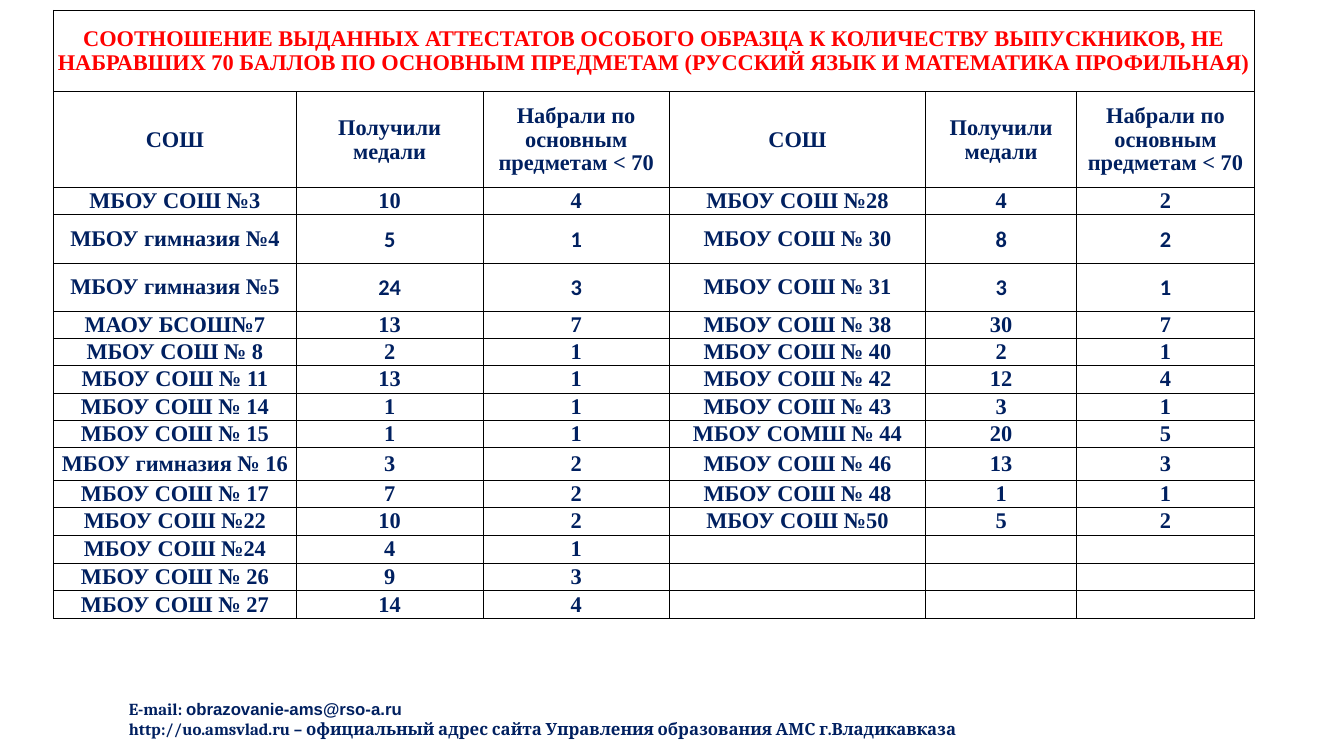
import lxml.etree
import pptx
import pptx.dml.color
import pptx.enum.text
import pptx.oxml.ns
import pptx.util

Inches, Pt = pptx.util.Inches, pptx.util.Pt

COLOURS = {"title": "FF0000", "text": "002060", "border": "000000", "cell": "FFFFFF"}
SERIF = "Times New Roman"

TITLE = (
    "СООТНОШЕНИЕ ВЫДАННЫХ АТТЕСТАТОВ ОСОБОГО ОБРАЗЦА К КОЛИЧЕСТВУ ВЫПУСКНИКОВ, "
    "НЕ НАБРАВШИХ 70 БАЛЛОВ ПО ОСНОВНЫМ ПРЕДМЕТАМ "
    "(РУССКИЙ ЯЗЫК И МАТЕМАТИКА ПРОФИЛЬНАЯ)"
)
HEADERS = (
    "СОШ", "Получили\nмедали", "Набрали по основным предметам < 70",
    "СОШ", "Получили медали", "Набрали по основным предметам < 70",
)
SCHOOLS = [
    ("МБОУ СОШ №3", 10, 4, "МБОУ СОШ №28", 4, 2),
    ("МБОУ гимназия №4", 5, 1, "МБОУ СОШ № 30", 8, 2),
    ("МБОУ гимназия №5", 24, 3, "МБОУ СОШ № 31", 3, 1),
    ("МАОУ БСОШ№7", 13, 7, "МБОУ СОШ № 38", 30, 7),
    ("МБОУ СОШ № 8", 2, 1, "МБОУ СОШ № 40", 2, 1),
    ("МБОУ СОШ № 11", 13, 1, "МБОУ СОШ № 42", 12, 4),
    ("МБОУ СОШ № 14", 1, 1, "МБОУ СОШ № 43", 3, 1),
    ("МБОУ СОШ № 15", 1, 1, "МБОУ СОМШ № 44", 20, 5),
    ("МБОУ гимназия № 16", 3, 2, "МБОУ СОШ № 46", 13, 3),
    ("МБОУ СОШ № 17", 7, 2, "МБОУ СОШ № 48", 1, 1),
    ("МБОУ СОШ №22", 10, 2, "МБОУ СОШ №50", 5, 2),
    ("МБОУ СОШ №24", 4, 1, "", "", ""),
    ("МБОУ СОШ № 26", 9, 3, "", "", ""),
    ("МБОУ СОШ № 27", 14, 4, "", "", ""),
]
CONTACTS = [
    [("E-mail: ", "Cambria"), ("obrazovanie-ams@rso-a.ru", "Arial")],
    [("http://uo.amsvlad.ru – официальный адрес сайта Управления образования "
      "АМС г.Владикавказа", "Cambria")],
]

COLUMN_WIDTHS = (2.41, 1.85, 1.85, 2.54, 1.5, 1.76)
ROW_HEIGHT = 0.27
SPECIAL_HEIGHTS = {0: 0.81, 1: 0.95, 3: 0.48, 4: 0.48, 10: 0.33}
CALIBRI_ROWS = (3, 4)  # gymnasium rows whose figures are in Calibri


def style_font(font, size, colour, name=None):
    font.size, font.bold = Pt(size), True
    font.color.rgb = pptx.dml.color.RGBColor.from_string(COLOURS[colour])
    if name:
        font.name = name


def add_borders(cell):
    properties = cell._tc.get_or_add_tcPr()
    for side in ("a:lnL", "a:lnR", "a:lnT", "a:lnB"):
        line = lxml.etree.SubElement(properties, pptx.oxml.ns.qn(side), w=str(Pt(0.5)))
        fill = lxml.etree.SubElement(line, pptx.oxml.ns.qn("a:solidFill"))
        lxml.etree.SubElement(fill, pptx.oxml.ns.qn("a:srgbClr"), val=COLOURS["border"])


def fill_cell(cell, text, colour, font_name):
    add_borders(cell)
    cell.fill.solid()
    cell.fill.fore_color.rgb = pptx.dml.color.RGBColor.from_string(COLOURS["cell"])
    cell.margin_left = cell.margin_right = cell.margin_top = Inches(0.01)
    cell.margin_bottom = 0
    cell.vertical_anchor = pptx.enum.text.MSO_ANCHOR.MIDDLE
    cell.text = str(text)
    for para in cell.text_frame.paragraphs:
        para.alignment = pptx.enum.text.PP_ALIGN.CENTER
        para.line_spacing = 0.95
        style_font(para.font, 16, colour, font_name)


def add_school_table(page):
    rows = [(TITLE,) + ("",) * (len(HEADERS) - 1), HEADERS] + SCHOOLS
    heights = [SPECIAL_HEIGHTS.get(i, ROW_HEIGHT) for i in range(len(rows))]
    table = page.shapes.add_table(
        len(rows), len(HEADERS), Inches(0.53), Inches(0.1),
        Inches(sum(COLUMN_WIDTHS)), Inches(sum(heights)),
    ).table
    table.first_row = table.horz_banding = False
    for column, width in zip(table.columns, COLUMN_WIDTHS):
        column.width = Inches(width)
    for i, (values, height) in enumerate(zip(rows, heights)):
        table.rows[i].height = Inches(height)
        for j, value in enumerate(values):
            is_figure = j % 3 > 0
            font_name = "Calibri" if i in CALIBRI_ROWS and is_figure else SERIF
            fill_cell(table.cell(i, j), value, "title" if i == 0 else "text", font_name)
    table.cell(0, 0).merge(table.cell(0, len(HEADERS) - 1))


def add_contacts(page):
    box = page.shapes.add_textbox(Inches(1.18), Inches(6.88), Inches(11.94), Inches(0.5))
    frame = box.text_frame
    frame.word_wrap = True
    for i, spans in enumerate(CONTACTS):
        para = frame.add_paragraph() if i else frame.paragraphs[0]
        style_font(para.font, 12, "text")
        for text, font_name in spans:
            span = para.add_run()
            span.text = text
            span.font.name = font_name


def main():
    deck = pptx.Presentation()
    deck.slide_width, deck.slide_height = Inches(13.33), Inches(7.5)
    page = deck.slides.add_slide(deck.slide_layouts.get_by_name("Blank"))
    add_contacts(page)
    add_school_table(page)
    deck.save("out.pptx")


if __name__ == "__main__":
    main()
